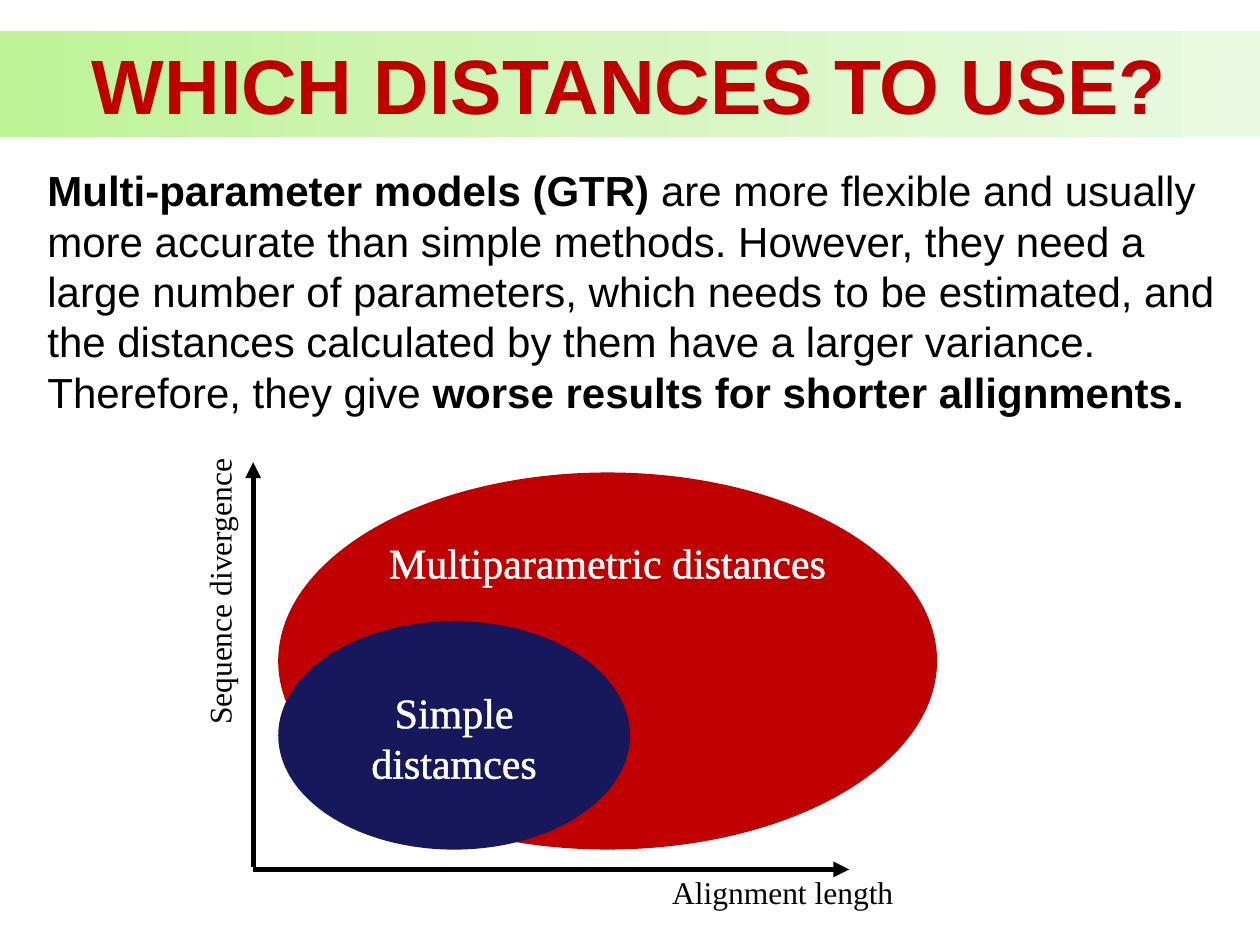
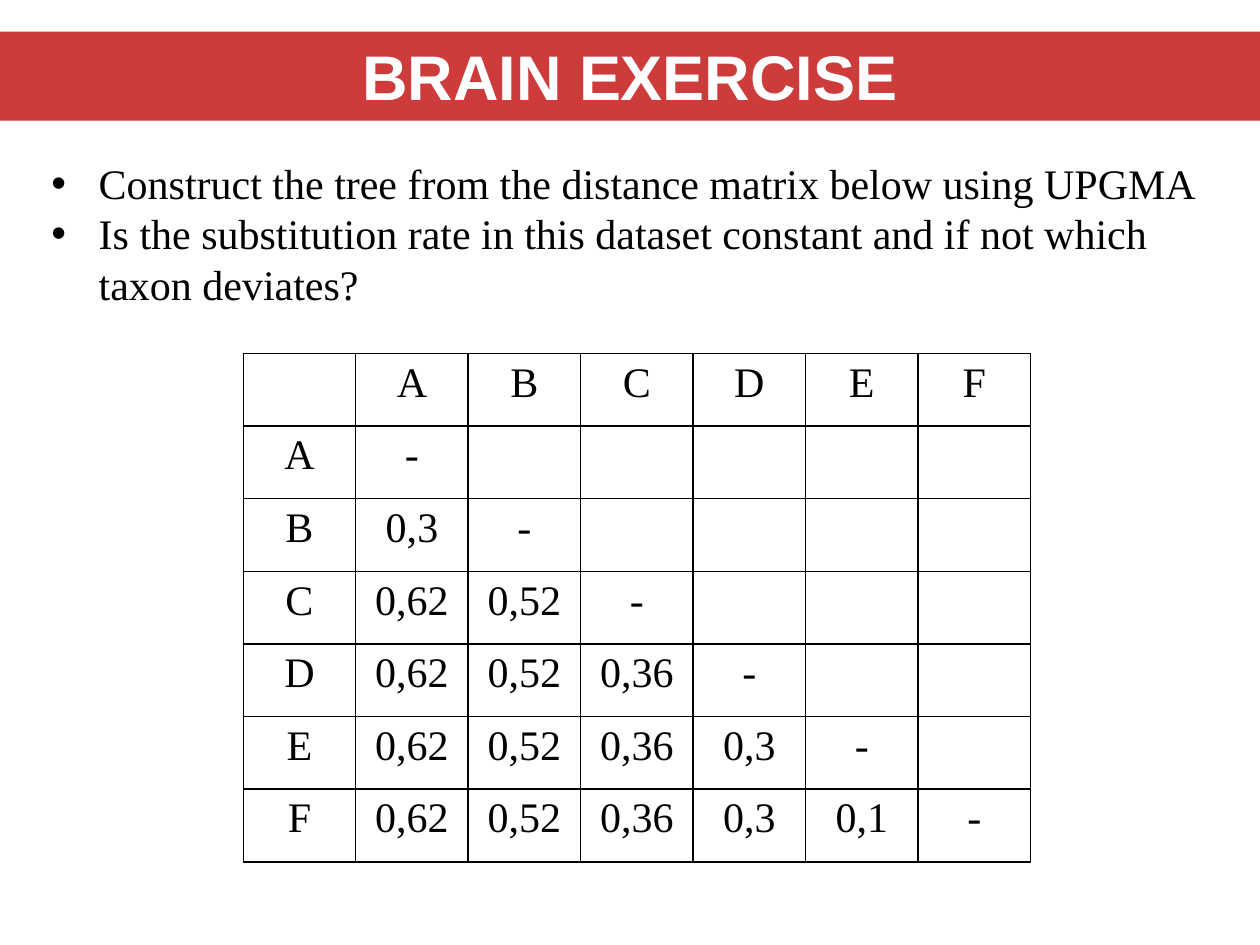
from copy import deepcopy

from pptx import Presentation
from pptx import util as u
from pptx.dml.color import RGBColor
from pptx.enum import shapes, text
from pptx.oxml.ns import qn
from lxml import etree

Pt = u.Pt
BLACK = RGBColor(0x00, 0x00, 0x00)
WHITE = RGBColor(0xFF, 0xFF, 0xFF)
RED = RGBColor(0xC0, 0x00, 0x00)
NAVY = RGBColor(0x17, 0x17, 0x5C)
BAND_GREENS = [RGBColor(0xBE, 0xF3, 0x97), RGBColor(0xD5, 0xF6, 0xC0), RGBColor(0xEA, 0xFA, 0xE0)]
SANS, SERIF = "Arial", "Times New Roman"
LEFT, CENTER = text.PP_ALIGN.LEFT, text.PP_ALIGN.CENTER
TOP, MIDDLE = text.MSO_ANCHOR.TOP, text.MSO_ANCHOR.MIDDLE


def write_text(frame, paragraphs, font=SERIF, size=24, color=BLACK, bold=False,
               align=LEFT, anchor=TOP, wrap=True, bullet=None, outline=False):
    frame.word_wrap = wrap
    frame.vertical_anchor = anchor
    for index, runs in enumerate(paragraphs):
        paragraph = frame.add_paragraph() if index else frame.paragraphs[0]
        paragraph.alignment = align
        if bullet:
            properties = paragraph._p.get_or_add_pPr()
            properties.set("marL", str(Pt(27)))
            properties.set("indent", str(-Pt(27)))
            etree.SubElement(properties, qn("a:buFont"), typeface=SANS)
            etree.SubElement(properties, qn("a:buChar"), char=bullet)
        for wording, strong in [(runs, bold)] if isinstance(runs, str) else runs:
            run = paragraph.add_run()
            run.text = wording
            run.font.name = font
            run.font.size = Pt(size)
            run.font.bold = strong
            run.font.color.rgb = color
            if outline:
                line = etree.Element(qn("a:ln"), w=str(Pt(0.75)))
                fill = etree.SubElement(line, qn("a:solidFill"))
                etree.SubElement(fill, qn("a:srgbClr"), val=str(color))
                run._r.get_or_add_rPr().insert(0, line)


def add_filled(slide, kind, left, top, width, height, color):
    shape = slide.shapes.add_shape(kind, Pt(left), Pt(top), Pt(width), Pt(height))
    shape.shadow.inherit = False
    shape.line.fill.background()
    shape.fill.solid()
    shape.fill.fore_color.rgb = color
    return shape


presentation = Presentation()
presentation.slide_width, presentation.slide_height = Pt(720), Pt(540)
blank = presentation.slide_layouts[6]
bands = []
slides = []
for title, size, height, color in [("WHICH DISTANCES TO USE?", 44, 60.5, RED),
                                   ("BRAIN EXERCISE", 36, 51, WHITE)]:
    slide = presentation.slides.add_slide(blank)
    band = add_filled(slide, shapes.MSO_SHAPE.RECTANGLE, 0, 18, 720, height, RED)
    write_text(band.text_frame, [title], font=SANS, size=size, color=color,
               bold=True, align=CENTER)
    slides.append(slide)
    bands.append(band)
distances, exercise = slides

bands[0].fill.gradient()
bands[0].fill.gradient_angle = 0
stop_list = bands[0]._element.spPr.find(".//" + qn("a:gsLst"))
stop_list.insert(1, deepcopy(stop_list[0]))
for stop, color, position in zip(bands[0].fill.gradient_stops, BAND_GREENS, (0, 0.5, 1)):
    stop.color.rgb = color
    stop.position = position
band_color = bands[1]._element.spPr.find(qn("a:solidFill"))[0]
etree.SubElement(band_color, qn("a:alpha"), val="77000")

for wording, width, height, color, anchor in [
        ("Multiparametric distances", 376.5, 215.5, RED, TOP),
        ("Simple distamces", 201, 130.5, NAVY, MIDDLE)]:
    ellipse = add_filled(distances, shapes.MSO_SHAPE.OVAL, 159, 485.5 - height,
                         width, height, color)
    ellipse.text_frame.margin_top = Pt(5)
    write_text(ellipse.text_frame, [wording], color=WHITE, align=CENTER,
               anchor=anchor, outline=True)

explanation = distances.shapes.add_textbox(Pt(20), Pt(90.5), Pt(692), Pt(181.5))
write_text(explanation.text_frame, [[
    ("Multi-parameter models (GTR) ", True),
    ("are more flexible and usually more accurate than simple methods. However, they need "
     "a large number of parameters, which needs to be estimated, and the distances "
     "calculated by them have a larger variance. Therefore, they give ", False),
    ("worse results for shorter allignments.", True)]], font=SANS)

for start_y, tip_x, tip_y in [(496.8, 485.3, 496.8), (495.4, 144.7, 264.2)]:
    axis = distances.shapes.add_connector(shapes.MSO_CONNECTOR.STRAIGHT, Pt(144.7),
                                          Pt(start_y), Pt(tip_x), Pt(tip_y))
    axis.line.color.rgb = BLACK
    axis.line.width = Pt(3)
    etree.SubElement(axis.line._get_or_add_ln(), qn("a:tailEnd"), type="triangle")
    etree.SubElement(axis._element.spPr, qn("a:effectLst"))

for wording, left, top, width, rotation in [("Alignment length", 377, 495.4, 142.6, 0),
                                            ("Sequence divergence", 41, 322.6, 168.5, 270)]:
    label = distances.shapes.add_textbox(Pt(left), Pt(top), Pt(width), Pt(29))
    label.rotation = rotation
    write_text(label.text_frame, [wording], size=18, wrap=False)

taxa = "ABCDEF"
matrix = [["", *taxa], ["A", "-"], ["B", "0,3", "-"], ["C", "0,62", "0,52", "-"],
          ["D", "0,62", "0,52", "0,36", "-"], ["E", "0,62", "0,52", "0,36", "0,3", "-"],
          ["F", "0,62", "0,52", "0,36", "0,3", "0,1", "-"]]
count = len(matrix)
table = exercise.shapes.add_table(count, count, Pt(139), Pt(202), Pt(450), Pt(290.5)).table
table.first_row = table.horz_banding = False
for column in table.columns:
    column.width = Pt(450 / count)
for row, values in zip(table.rows, matrix):
    row.height = Pt(290.5 / count)
    for index, cell in enumerate(row.cells):
        cell.fill.background()
        for position, side in enumerate(("lnL", "lnR", "lnT", "lnB")):
            border = etree.Element(qn("a:" + side), w=str(Pt(1)))
            fill = etree.SubElement(border, qn("a:solidFill"))
            etree.SubElement(fill, qn("a:srgbClr"), val=str(BLACK))
            cell._tc.get_or_add_tcPr().insert(position, border)
        if index < len(values) and values[index]:
            write_text(cell.text_frame, [values[index]], align=CENTER)

questions = exercise.shapes.add_textbox(Pt(22.3), Pt(86.4), Pt(672), Pt(124))
write_text(questions.text_frame, [
    "Construct the tree from the distance matrix below using UPGMA",
    "Is the substitution rate in this dataset constant and if not which taxon deviates?"],
    bullet="•")

presentation.save("out.pptx")
